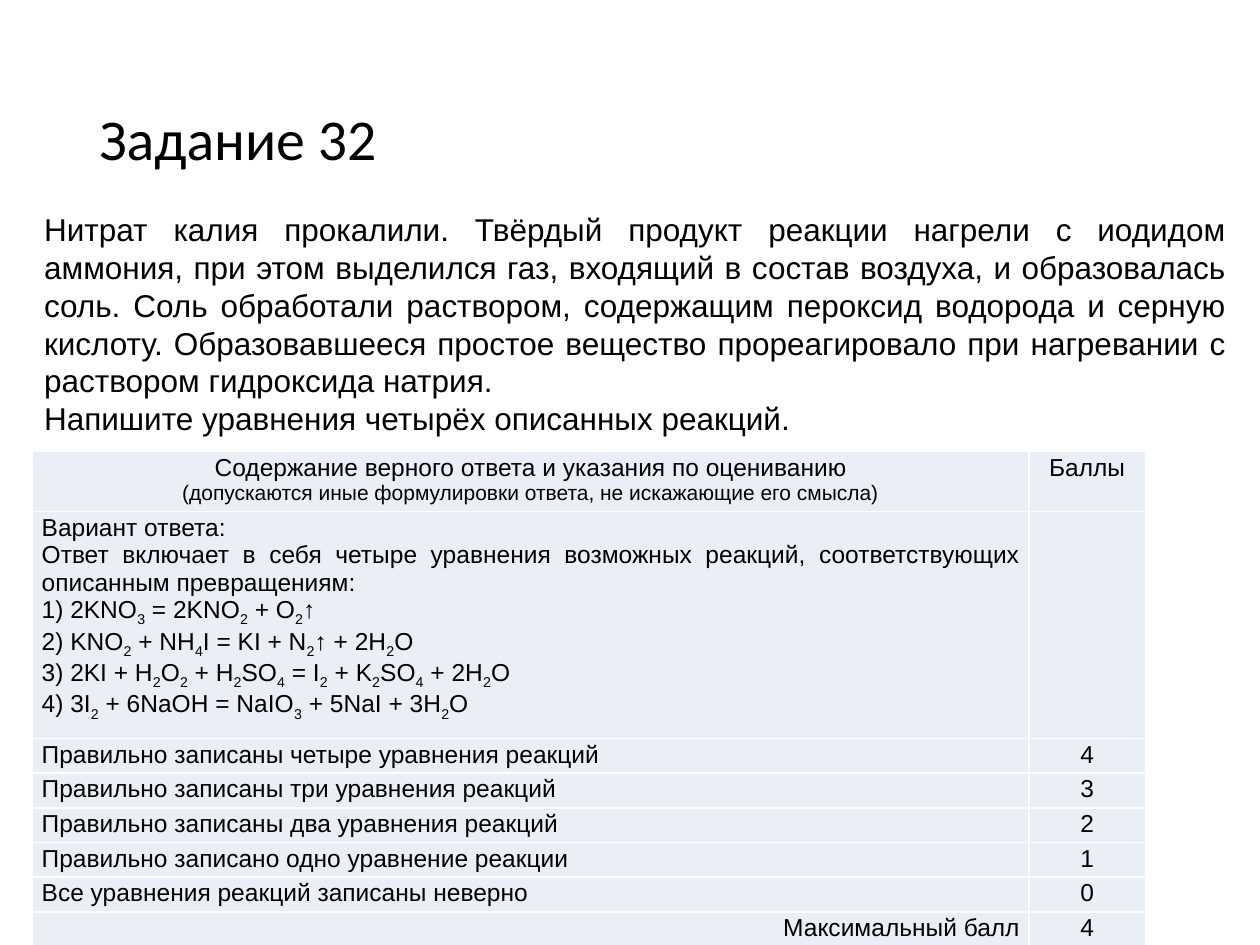
from dataclasses import dataclass

from lxml.etree import SubElement
from pptx import Presentation
from pptx.dml.color import RGBColor
from pptx.enum.text import MSO_ANCHOR, PP_ALIGN as Align
from pptx.oxml.ns import qn
from pptx.util import Cm, Pt


@dataclass(frozen=True)
class Theme:
    """Colours, fonts and type sizes of the slide."""
    ink: RGBColor = RGBColor(0x00, 0x00, 0x00)
    cell: RGBColor = RGBColor(0xEA, 0xEF, 0xF7)
    border: str = "FFFFFF"
    heading_font: str = "Calibri"
    text_font: str = "Arial"
    title: int = 33
    body: int = 18
    table: int = 14
    note: int = 12


THEME = Theme()
TASK = [
    "Нитрат калия прокалили. Твёрдый продукт реакции нагрели с иодидом аммония, "
    "при этом выделился газ, входящий в состав воздуха, и образовалась соль. "
    "Соль обработали раствором, содержащим пероксид водорода и серную кислоту. "
    "Образовавшееся простое вещество прореагировало при нагревании с раствором "
    "гидроксида натрия.",
    "Напишите уравнения четырёх описанных реакций.",
]
HEADER = [
    "Содержание верного ответа и указания по оцениванию",
    "(допускаются иные формулировки ответа, не искажающие его смысла)",
]
ANSWER = [
    "Вариант ответа:",
    "Ответ включает в себя четыре уравнения возможных реакций, "
    "соответствующих описанным превращениям:",
    "1) 2KNO_3 = 2KNO_2 + O_2↑",
    "2) KNO_2 + NH_4I = KI + N_2↑ + 2H_2O",
    "3) 2KI + H_2O_2 + H_2SO_4 = I_2 + K_2SO_4 + 2H_2O",
    "4) 3I_2 + 6NaOH = NaIO_3 + 5NaI + 3H_2O",
]
CRITERIA = [
    ("Правильно записаны четыре уравнения реакций", "4"),
    ("Правильно записаны три уравнения реакций", "3"),
    ("Правильно записаны два уравнения реакций", "2"),
    ("Правильно записано одно уравнение реакции", "1"),
    ("Все уравнения реакций записаны неверно", "0"),
]
TOTAL = ("Максимальный балл", "4")


def style(para, size, align, font=THEME.text_font):
    """Set the font and alignment of a whole paragraph."""
    para.alignment = align
    para.font.name = font
    para.font.size = Pt(size)
    para.font.color.rgb = THEME.ink


def add_span(para, text, subscript=False):
    """Add a run, lowered when it is a subscript."""
    span = para.add_run()
    span.text = text
    if subscript:
        span.font._element.set("baseline", "-25000")


def write(frame, lines, sizes, align):
    """Write one paragraph per line; an underscore lowers the next digit."""
    for index, (line, size) in enumerate(zip(lines, sizes)):
        para = frame.add_paragraph() if index else frame.paragraphs[0]
        style(para, size, align)
        first, *rest = line.split("_")
        add_span(para, first)
        for part in rest:
            add_span(para, part[0], subscript=True)
            if part[1:]:
                add_span(para, part[1:])


def place_title(page, left, top, width, height):
    """Move and format the title placeholder."""
    title = page.shapes.title
    title.left, title.top, title.width, title.height = left, top, width, height
    frame = title.text_frame
    frame.text = "Задание 32"
    frame.vertical_anchor = MSO_ANCHOR.MIDDLE
    para = frame.paragraphs[0]
    para.line_spacing = 0.9
    style(para, THEME.title, Align.LEFT, THEME.heading_font)


def place_task(page, left, top, width, height):
    """Add the wording of the task below the title."""
    frame = page.shapes.add_textbox(left, top, width, height).text_frame
    frame.word_wrap = True
    frame.margin_top = Cm(0.86)
    write(frame, TASK, [THEME.body] * len(TASK), Align.JUSTIFY)


def format_cell(cell):
    """Set the fill, margins and thin borders of a cell."""
    cell.fill.solid()
    cell.fill.fore_color.rgb = THEME.cell
    cell.margin_left = cell.margin_right = Cm(0.18)
    cell.margin_top = cell.margin_bottom = Cm(0.05)
    properties = cell._tc.get_or_add_tcPr()
    for index, side in enumerate(("lnL", "lnR", "lnT", "lnB")):
        line = SubElement(properties, qn(f"a:{side}"), w=str(Pt(1)))
        fill = SubElement(line, qn("a:solidFill"))
        SubElement(fill, qn("a:srgbClr"), val=THEME.border)
        properties.insert(index, line)


def place_scoring(page, left, top, width, height):
    """Add the table of the answer and its points."""
    rows = [
        (HEADER, Align.CENTER, "Баллы"),
        (ANSWER, Align.JUSTIFY, ""),
        *(([text], Align.JUSTIFY, points) for text, points in CRITERIA),
        ([TOTAL[0]], Align.RIGHT, TOTAL[1]),
    ]
    table = page.shapes.add_table(len(rows), 2, left, top, width, height).table
    points_width = Cm(2.35)
    table.columns[0].width = width - points_width
    table.columns[1].width = points_width
    header_height, line_height = Cm(1.21), Cm(0.7)
    answer_height = height - header_height - (len(rows) - 2) * line_height
    heights = [header_height, answer_height] + [line_height] * (len(rows) - 2)
    for index, (lines, align, points) in enumerate(rows):
        table.rows[index].height = heights[index]
        content, score = table.cell(index, 0), table.cell(index, 1)
        format_cell(content)
        format_cell(score)
        sizes = [THEME.table, THEME.note] if lines is HEADER else [THEME.table] * len(lines)
        write(content.text_frame, lines, sizes, align)
        if points:
            write(score.text_frame, [points], [THEME.table], Align.CENTER)


def main():
    """Build and save the deck."""
    deck = Presentation()
    deck.slide_width, deck.slide_height = Cm(25.4), Cm(19.05)
    page = deck.slides.add_slide(deck.slide_layouts[5])
    place_title(page, Cm(1.75), Cm(1.02), Cm(21.9), Cm(3.68))
    place_task(page, Cm(0.64), Cm(3.38), Cm(24.33), Cm(5.64))
    place_scoring(page, Cm(0.66), Cm(9.1), Cm(22.43), Cm(9.96))
    deck.save("out.pptx")


if __name__ == "__main__":
    main()
